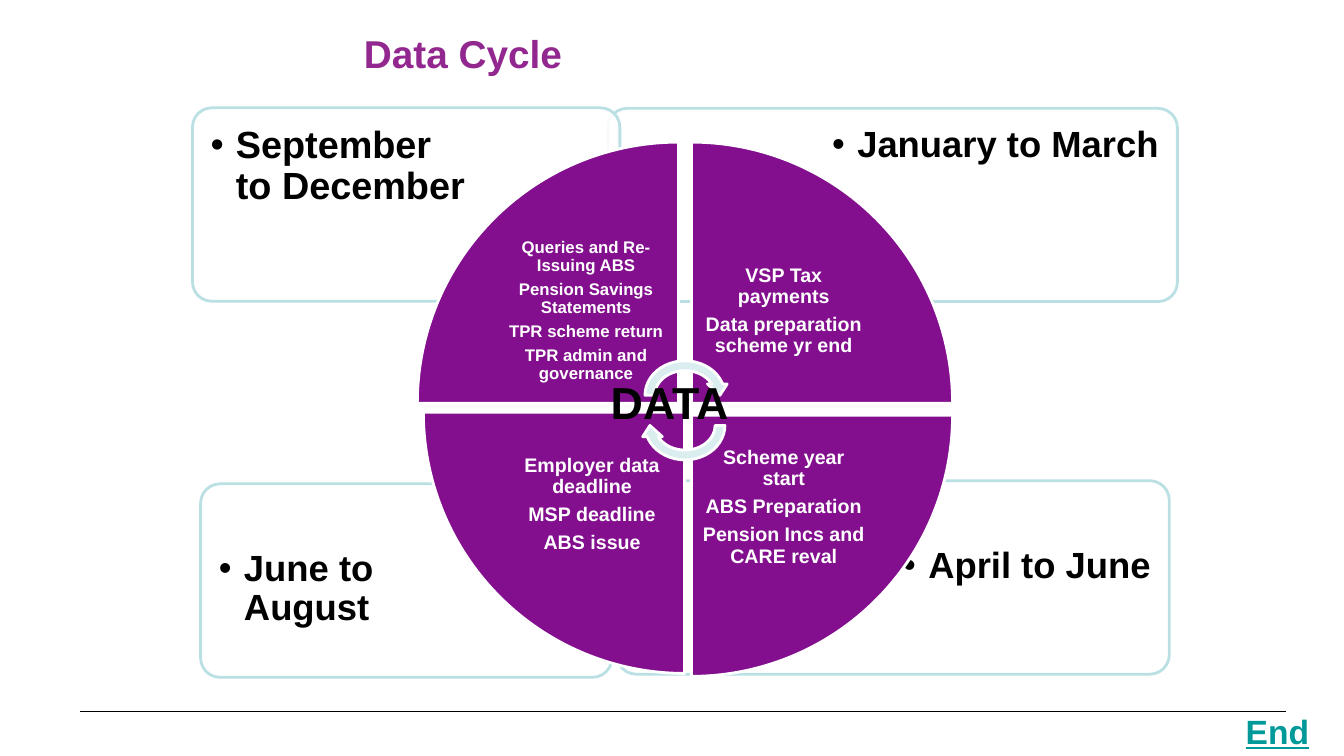
"""Build the Data Cycle slide: four period cards around a wheel of wedges."""
from lxml import etree
from pptx import Presentation
from pptx.dml.color import RGBColor
from pptx.enum.shapes import MSO_CONNECTOR, MSO_SHAPE
from pptx.enum.text import MSO_ANCHOR, MSO_AUTO_SIZE, PP_ALIGN
from pptx.oxml.ns import qn
from pptx.util import Pt

STRAIGHT = MSO_CONNECTOR.STRAIGHT
ROUNDED, WEDGE, ARROW = MSO_SHAPE.ROUNDED_RECTANGLE, MSO_SHAPE.PIE_WEDGE, MSO_SHAPE.CIRCULAR_ARROW
TOP, MIDDLE = MSO_ANCHOR.TOP, MSO_ANCHOR.MIDDLE
LEFT, CENTER, RIGHT = PP_ALIGN.LEFT, PP_ALIGN.CENTER, PP_ALIGN.RIGHT
FIT_SHAPE, NO_FIT = MSO_AUTO_SIZE.SHAPE_TO_FIT_TEXT, MSO_AUTO_SIZE.NONE

COLORS = {
    "white": "FFFFFF", "black": "000000", "title": "91278F", "wedge": "830F8F",
    "card_line": "BBE0E3", "arrow": "DAEDEF", "end": "009999",
}
FONT = "Arial"
WEDGE_SIZE = 186.5
WEDGE_TEXT_SIZE = 131.9

CARDS = [
    ("April to June", 26, (440.6, 343.4, 394.6, 138.2), RIGHT, 37.4),
    ("June to August", 26, (143.3, 345.6, 293.8, 138.2), LEFT, 37.4),
    ("January to March", 26, (434.2, 77.4, 406.8, 138), RIGHT, 3),
    ("September to December", 27, (137.5, 77, 305.3, 138.2), LEFT, 3),
]
WEDGES = [
    (298.1, 101.5, 0, 12, ["Queries and Re-Issuing ABS", "Pension Savings Statements",
                           "TPR scheme return", "TPR admin and governance"]),
    (493.9, 101.5, 90, 14, ["VSP Tax payments", "Data preparation scheme yr end"]),
    (493.9, 296.6, 180, 14, ["Scheme year start", "ABS Preparation",
                             "Pension Incs and CARE reval"]),
    (302.4, 294.5, 270, 14, ["Employer data deadline", "MSP deadline", "ABS issue"]),
]


class SlideBuilder:
    """Holds the style and the current slide."""

    def __init__(self, presentation):
        """Add a title-only slide."""
        self.slide = presentation.slides.add_slide(presentation.slide_layouts[5])

    def color(self, name):
        """Return a named colour."""
        return RGBColor.from_string(COLORS[name])

    def run(self, paragraph, text, size, color, underline=None):
        """Add one bold run."""
        run = paragraph.add_run()
        run.text = text
        font = run.font
        font.name, font.size, font.bold, font.underline = FONT, Pt(size), True, underline
        font.color.rgb = self.color(color)

    def title(self, text, box):
        """Place and format the title."""
        title = self.slide.shapes.title
        title.left, title.top, title.width, title.height = map(Pt, box)
        frame = title.text_frame
        frame.auto_size = NO_FIT
        frame.vertical_anchor = MIDDLE
        paragraph = frame.paragraphs[0]
        paragraph.alignment = LEFT
        self.run(paragraph, text, 27.7, "title")

    def rule(self, left, right, top):
        """Draw a thin horizontal line."""
        line = self.slide.shapes.add_connector(STRAIGHT, Pt(left), Pt(top), Pt(right), Pt(top))
        line.line.color.rgb = self.color("black")
        line.line.width = Pt(0.75)
        etree.SubElement(line._element.spPr, qn("a:effectLst"))

    def shape(self, kind, box, fill, line="white", rotation=0):
        """Draw a preset shape."""
        shape = self.slide.shapes.add_shape(kind, *map(Pt, box))
        shape.shadow.inherit = False
        shape.rotation = rotation
        shape.fill.solid()
        shape.fill.fore_color.rgb = self.color(fill)
        shape.line.color.rgb = self.color(line)
        shape.line.width = Pt(2)
        return shape

    def frame(self, box, inset, anchor=TOP):
        """Add a wrapping text box and return its frame."""
        frame = self.slide.shapes.add_textbox(*map(Pt, box)).text_frame
        frame.word_wrap = True
        frame.vertical_anchor = anchor
        frame.margin_left = frame.margin_right = Pt(inset)
        frame.margin_top = frame.margin_bottom = Pt(inset)
        return frame

    def card(self, text, size, box, alignment, drop):
        """Draw a period card with its bulleted label."""
        left, top, width, height = box
        card = self.shape(ROUNDED, box, "white", "card_line")
        card.adjustments[0] = 0.1
        fill_color = card._element.spPr.find(qn("a:solidFill"))[0]
        etree.SubElement(fill_color, qn("a:alpha"), val="90000")
        text_width = 0.7 * width - 6.5
        text_left = left + 3 if alignment == LEFT else left + width - 3 - text_width
        paragraph = self.frame((text_left, top + drop, text_width, 97.2), 10).paragraphs[0]
        properties = paragraph._p.get_or_add_pPr()
        properties.set("marL", str(Pt(18)))
        properties.set("indent", str(Pt(-18)))
        etree.SubElement(properties, qn("a:buFont"), typeface=FONT)
        etree.SubElement(properties, qn("a:buChar"), char="•")
        paragraph.level = 1
        paragraph.alignment = alignment
        paragraph.line_spacing = 0.9
        paragraph.space_after = Pt(0.15 * size)
        self.run(paragraph, text, size, "black")

    def wedge(self, left, top, rotation, size, texts):
        """Draw a quarter of the wheel with its tasks near the hub."""
        self.shape(WEDGE, (left, top, WEDGE_SIZE, WEDGE_SIZE), "wedge", rotation=rotation)
        offset = WEDGE_SIZE - WEDGE_TEXT_SIZE
        text_left = left + (offset if rotation in (0, 270) else 0)
        text_top = top + (offset if rotation in (0, 90) else 0)
        box = (text_left, text_top, WEDGE_TEXT_SIZE, WEDGE_TEXT_SIZE)
        frame = self.frame(box, 0.56 * size, MIDDLE)
        for index, text in enumerate(texts):
            paragraph = frame.add_paragraph() if index else frame.paragraphs[0]
            paragraph.alignment = CENTER
            paragraph.line_spacing = 0.9
            paragraph.space_after = Pt(0.35 * size)
            self.run(paragraph, text, size, "white")

    def label(self, text, box, size, color, wrap=True, underline=None):
        """Add a single-line label."""
        frame = self.slide.shapes.add_textbox(*map(Pt, box)).text_frame
        frame.word_wrap = wrap
        frame.auto_size = FIT_SHAPE
        self.run(frame.paragraphs[0], text, size, color, underline)


def main():
    """Build and save the presentation."""
    presentation = Presentation()
    presentation.slide_width, presentation.slide_height = Pt(960), Pt(540)
    builder = SlideBuilder(presentation)
    builder.rule(56.9, 918.7, 508.3)
    builder.title("Data Cycle", (252.7, 15.1, 648, 45.4))
    for card in CARDS:
        builder.card(*card)
    for wedge in WEDGES:
        builder.wedge(*wedge)
    for top, rotation in ((254.2, 0), (275.8, 180)):
        builder.shape(ARROW, (457.2, top, 64.1, 56.2), "arrow", rotation=rotation)
    builder.label("DATA", (429.1, 264.2, 147.6, 46.1), 32, "black")
    builder.label("End", (882.7, 504, 60.5, 36), 24, "end", wrap=False, underline=True)
    presentation.save("out.pptx")


if __name__ == "__main__":
    main()
